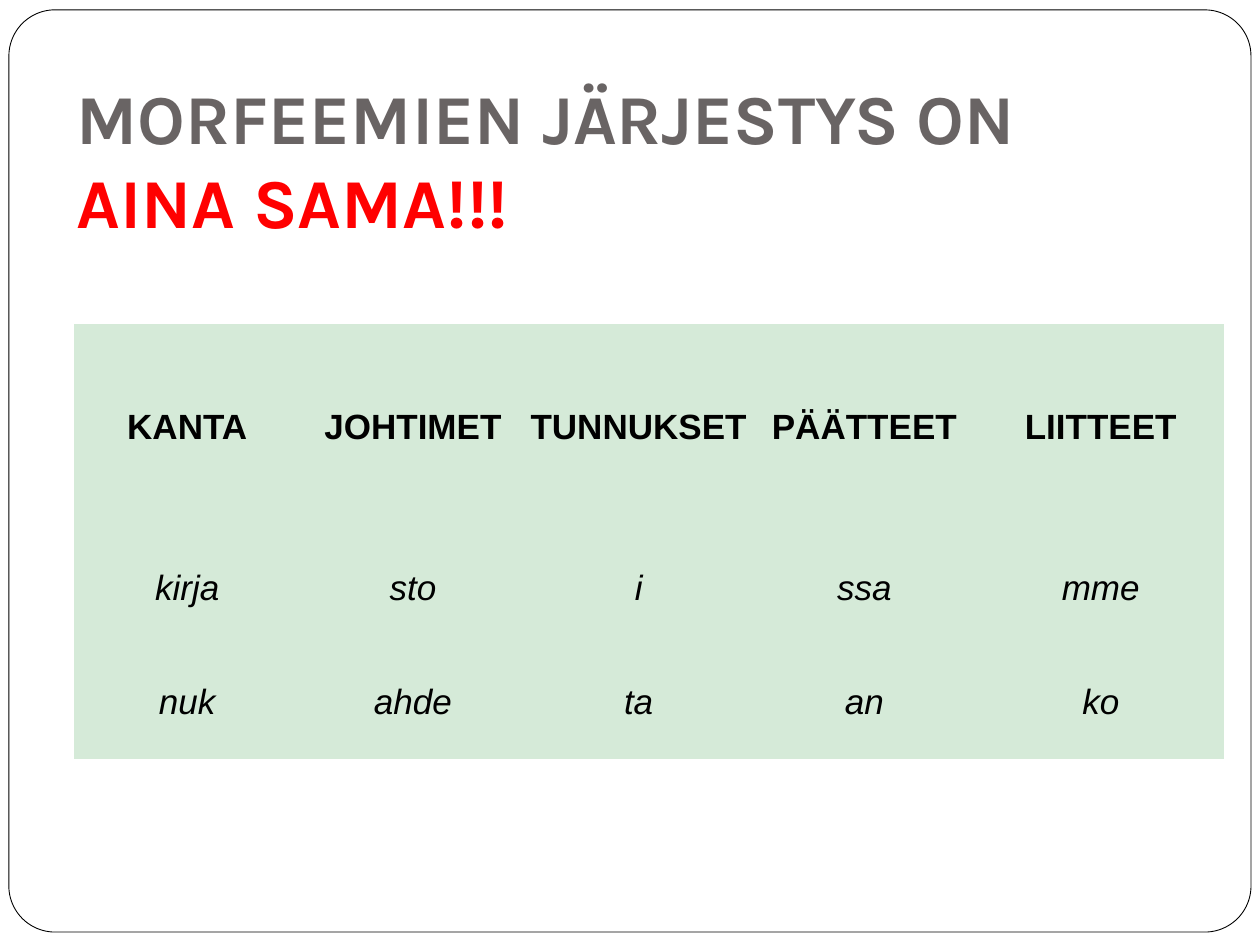
from pptx import Presentation
from pptx.dml.color import RGBColor
from pptx.enum.shapes import MSO_SHAPE
from pptx.enum.text import MSO_ANCHOR, PP_ALIGN
from pptx.util import Cm, Pt


def color(hex_string):
    return RGBColor.from_string(hex_string)


def style(font, name, size, hex_string, bold=False, italic=False):
    font.name, font.size = name, Pt(size)
    font.bold, font.italic = bold, italic
    font.color.rgb = color(hex_string)


prs = Presentation()
prs.slide_width, prs.slide_height = Cm(25.4), Cm(19.05)
s = prs.slides.add_slide(prs.slide_layouts[5])

# Rounded frame, placed behind the title
frame = s.shapes.add_shape(MSO_SHAPE.ROUNDED_RECTANGLE,
                           Cm(0.18), Cm(0.2), Cm(25.04), Cm(18.59))
frame.adjustments[0] = 0.05
frame.shadow.inherit = False
frame.fill.solid()
frame.fill.fore_color.rgb = color("FFFFFF")
frame.line.color.rgb = color("000000")
frame.line.width = Pt(0.5)
s.shapes._spTree.insert(2, frame._element)

# Title
title = s.shapes.title
title.left, title.top = Cm(1.3), Cm(0.76)
title.width, title.height = Cm(22.83), Cm(4.37)
tf = title.text_frame
tf.word_wrap = True
tf.vertical_anchor = MSO_ANCHOR.BOTTOM
tf.margin_left = tf.margin_right = tf.margin_bottom = Cm(0.25)
tf.margin_top = Cm(0.13)
p = tf.paragraphs[0]
p.alignment = PP_ALIGN.LEFT
for text, hex_string in (("MORFEEMIEN JÄRJESTYS ON ", "696464"),
                         ("AINA SAMA!!!", "FF0000")):
    r = p.add_run()
    r.text = text
    style(r.font, "Karla", 40, hex_string, bold=True)

# Morpheme table: heading row, then one word per row
rows = [
    ["KANTA", "JOHTIMET", "TUNNUKSET", "PÄÄTTEET", "LIITTEET"],
    ["kirja", "sto", "i", "ssa", "mme"],
    ["nuk", "ahde", "ta", "an", "ko"],
]
widths = [4.55] * 4 + [4.98]
heights = [4.18, 2.3, 2.3]
table = s.shapes.add_table(len(rows), len(widths), Cm(1.5), Cm(6.53),
                           Cm(sum(widths)), Cm(sum(heights))).table
table.horz_banding = False
for column, width in zip(table.columns, widths):
    column.width = Cm(width)
for i, (words, height) in enumerate(zip(rows, heights)):
    table.rows[i].height = Cm(height)
    for j, word in enumerate(words):
        cell = table.cell(i, j)
        cell.fill.solid()
        cell.fill.fore_color.rgb = color("D5EAD8")
        cell.vertical_anchor = MSO_ANCHOR.MIDDLE
        cell.margin_left = cell.margin_right = Cm(0.08)
        cell.margin_top = cell.margin_bottom = Cm(0.08)
        cell.text_frame.text = word
        p = cell.text_frame.paragraphs[0]
        p.alignment = PP_ALIGN.CENTER
        style(p.runs[0].font, "Arial", 20, "000000", bold=i == 0, italic=i > 0)

# Clear the white grid lines of the default table style
style_id = table._tbl.tblPr.find("{*}tableStyleId")
style_id.text = "{2D5ABB26-0587-4C30-8999-92F81FD0307C}"

prs.save("out.pptx")
